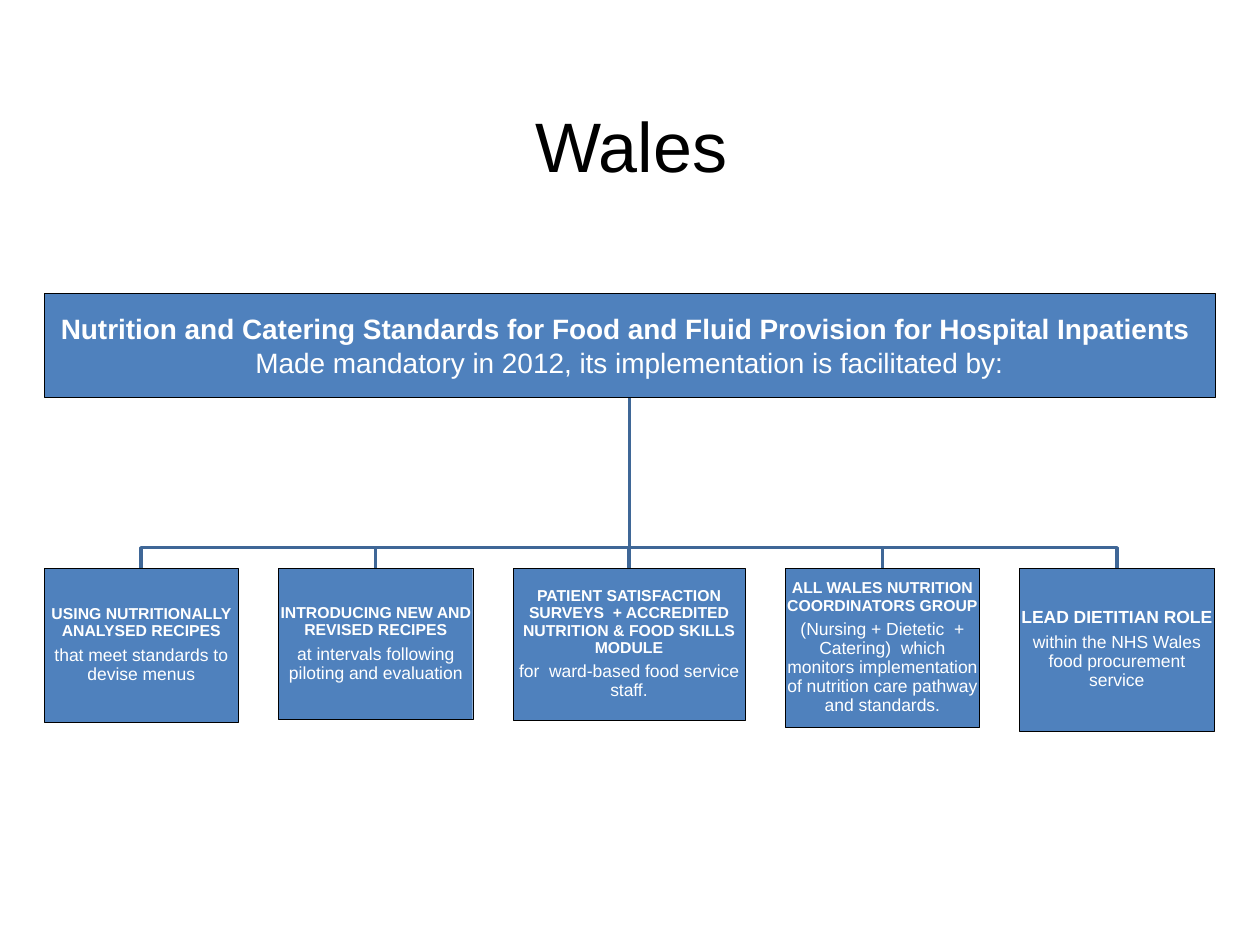
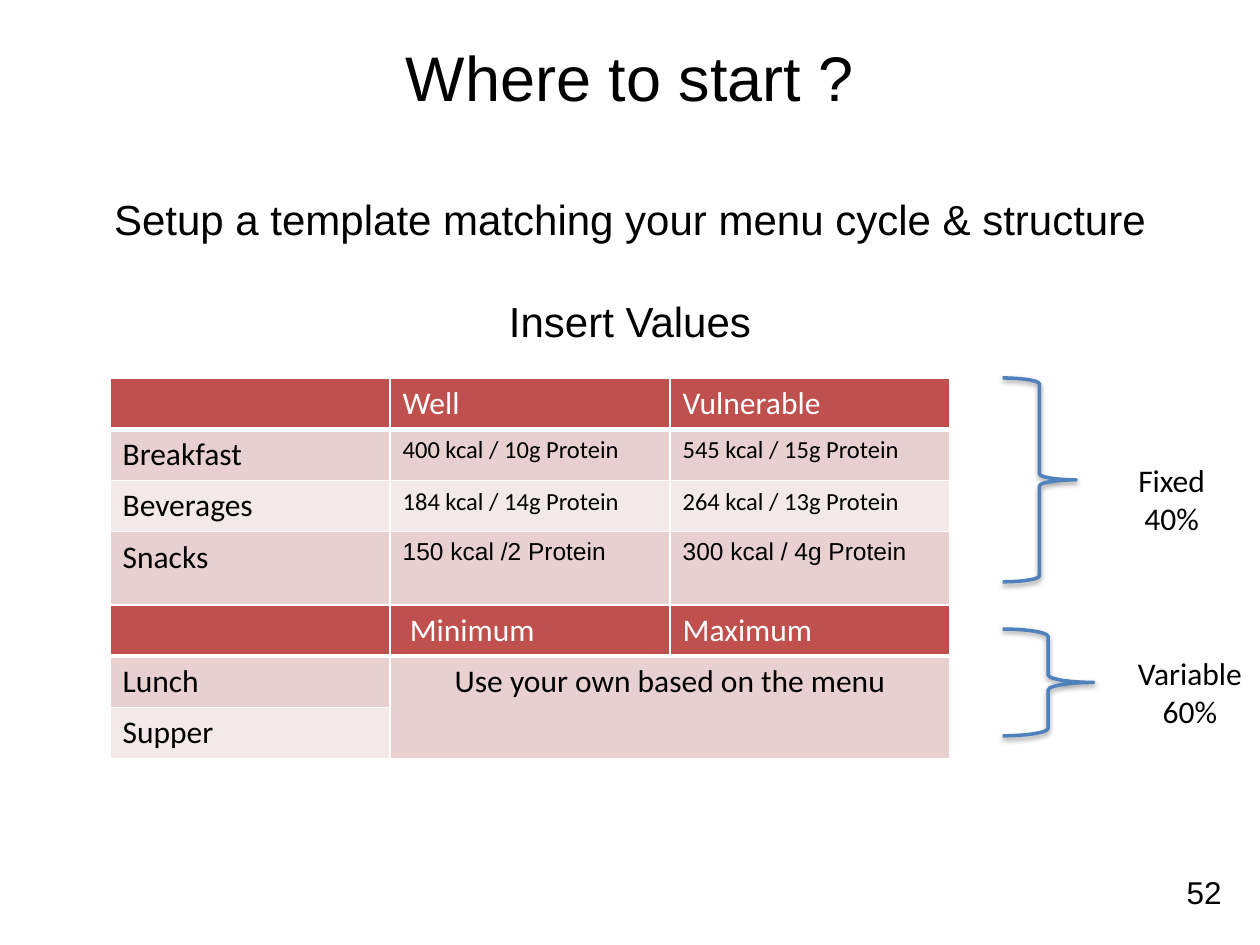
from lxml.etree import SubElement
from pptx import Presentation
from pptx.dml.color import RGBColor
from pptx.enum.shapes import MSO_SHAPE as Shape
from pptx.enum.text import MSO_ANCHOR as Anchor, MSO_AUTO_SIZE as AutoSize, PP_ALIGN as Align
from pptx.oxml.ns import qn
from pptx.util import Pt

BLUE, NAVY, RED = "4F81BD", "3F6797", "C0504D"
PINK, PALE = "E8D0D0", "F4E9E9"
BLACK, WHITE = "000000", "FFFFFF"
HEADING, BODY = "Arial", "Calibri"

STANDARD = [
    ("Nutrition and Catering Standards for Food and Fluid Provision for Hospital Inpatients ", 16, True),
    ("Made mandatory in 2012, its implementation is facilitated by:", 16, False),
]
MEASURES = [
    (111, 88, 9, "USING NUTRITIONALLY ANALYSED RECIPES",
     "that meet standards to devise menus"),
    (111, 86.5, 9, "INTRODUCING NEW AND REVISED RECIPES",
     "at intervals following piloting and evaluation"),
    (132.5, 87, 9, "PATIENT SATISFACTION SURVEYS  + ACCREDITED NUTRITION & FOOD SKILLS MODULE",
     "for  ward-based food service staff."),
    (111, 91, 9, "ALL WALES NUTRITION COORDINATORS GROUP",
     "(Nursing + Dietetic  + Catering)  which monitors implementation of nutrition care pathway and standards."),
    (111, 93, 10, "LEAD DIETITIAN ROLE",
     "within the NHS Wales food procurement service"),
]
START_TITLE = [
    ("Where to start ?", 36, 0),
    ("Setup a template matching your menu cycle & structure", 24, 45),
    ("Insert Values", 24, 30),
]
FIXED_ROWS = [
    ("", "Well", "Vulnerable"),
    ("Breakfast", "400 kcal / 10g Protein", "545 kcal / 15g Protein"),
    ("Beverages", "184 kcal / 14g Protein", "264 kcal / 13g Protein"),
    ("Snacks", "150 kcal /2 Protein", "300 kcal / 4g Protein"),
]
VARIABLE_ROWS = [
    ("", "Minimum", "Maximum"),
    ("Lunch", "Use your own based on the menu", ""),
    ("Supper", "", ""),
]
SHARES = [
    ((573, 216, 42, 116.5), (642.5, 260, 54, 51), ("Fixed", "40%")),
    ((573, 359.5, 52, 61), (642.5, 370, 75, 51), ("Variable", "60%")),
]
PAGE_NUMBER = "52"

ORG_LEFT, ORG_WIDTH, STANDARD_TOP, STANDARD_HEIGHT = 25.2, 669, 167.8, 59
BUS_TOP, MEASURE_TOP, MEASURE_GAP = 313, 324.7, 23
TABLE_LEFT, COLUMN_WIDTH, ROW_HEIGHT = 62.9, 160, 29.3


def rgb(value):
    return RGBColor.from_string(value)


def points(*values):
    return [Pt(value) for value in values]


def apply(target, values):
    for name, value in values.items():
        setattr(target, name, value)


def write(paragraph, text, size, color=BLACK, font=HEADING, bold=False, **layout):
    apply(paragraph, layout)
    run = paragraph.add_run()
    run.text = text
    apply(run.font, {"size": Pt(size), "name": font, "bold": bold})
    run.font.color.rgb = rgb(color)


def paragraphs(frame, items):
    for index, item in enumerate(items):
        yield (frame.add_paragraph() if index else frame.paragraphs[0]), item


def add_title(slide, box, lines):
    title = slide.shapes.title
    apply(title, dict(zip(("left", "top", "width", "height"), points(*box))))
    frame = title.text_frame
    apply(frame, {"word_wrap": True, "auto_size": AutoSize.NONE, "vertical_anchor": Anchor.MIDDLE})
    for paragraph, (text, size, gap) in paragraphs(frame, lines):
        write(paragraph, text, size, alignment=Align.CENTER, space_before=Pt(gap))


def add_box(slide, box, lines, **layout):
    shape = slide.shapes.add_shape(Shape.RECTANGLE, *points(*box))
    shape.shadow.inherit = False
    shape.fill.solid()
    shape.fill.fore_color.rgb = rgb(BLUE)
    shape.line.color.rgb = rgb(BLACK)
    shape.line.width = Pt(0.25)
    frame = shape.text_frame
    apply(frame, {"word_wrap": True, "vertical_anchor": Anchor.MIDDLE})
    apply(frame, dict.fromkeys(("margin_left", "margin_right", "margin_top", "margin_bottom"), Pt(0.7)))
    for paragraph, (text, size, bold) in paragraphs(frame, lines):
        write(paragraph, text, size, WHITE, bold=bold, alignment=Align.CENTER, **layout)


def add_branch(slide, center):
    trunk = ORG_LEFT + ORG_WIDTH / 2
    start = points(trunk, STANDARD_TOP + STANDARD_HEIGHT)
    route = [points(trunk, BUS_TOP), points(center, BUS_TOP), points(center, MEASURE_TOP)]
    builder = slide.shapes.build_freeform(*start)
    builder.add_line_segments(route, close=False)
    branch = builder.convert_to_shape()
    branch.shadow.inherit = False
    branch.fill.background()
    branch.line.color.rgb = rgb(NAVY)
    branch.line.width = Pt(2)


def add_label(slide, box, lines, font, alignment):
    frame = slide.shapes.add_textbox(*points(*box)).text_frame
    frame.word_wrap = False
    for paragraph, text in paragraphs(frame, lines):
        write(paragraph, text, 18, font=font, alignment=alignment)


def add_brace(slide, box):
    brace = slide.shapes.add_shape(Shape.RIGHT_BRACE, *points(*box))
    brace.shadow.inherit = False
    brace.fill.background()
    brace.line.color.rgb = rgb(BLUE)
    brace.line.width = Pt(2)
    effects = brace._element.spPr.find(qn("a:effectLst"))
    shadow = SubElement(effects, qn("a:outerShdw"), blurRad=str(Pt(3.1)), dist=str(Pt(1.6)),
                        dir="5400000", rotWithShape="0")
    color = SubElement(shadow, qn("a:srgbClr"), val=BLACK)
    SubElement(color, qn("a:alpha"), val="38000")


def style_cell(cell, fill, bottom):
    properties = cell._tc.get_or_add_tcPr()
    for side, width in (("L", 1), ("R", 1), ("T", 1), ("B", bottom)):
        line = SubElement(properties, qn(f"a:ln{side}"), w=str(Pt(width)))
        SubElement(SubElement(line, qn("a:solidFill")), qn("a:srgbClr"), val=WHITE)
    cell.fill.solid()
    cell.fill.fore_color.rgb = rgb(fill)


def add_menu_table(slide, top, rows, last_height, value_size):
    heights = [ROW_HEIGHT] * (len(rows) - 1) + [last_height]
    box = points(TABLE_LEFT, top, 3 * COLUMN_WIDTH, sum(heights))
    table = slide.shapes.add_table(len(rows), 3, *box).table
    apply(table, {"first_row": False, "horz_banding": False})
    for row_index, (row, height) in enumerate(zip(rows, heights)):
        table.rows[row_index].height = Pt(height)
        header = row_index == 0
        fill = RED if header else PINK if row_index % 2 else PALE
        for column, text in enumerate(row):
            cell = table.cell(row_index, column)
            style_cell(cell, fill, 3 if header else 1)
            if text:
                value = column > 0 and not header
                font = HEADING if value and row[0] == "Snacks" else BODY
                write(cell.text_frame.paragraphs[0], text, value_size if value else 18,
                      WHITE if header else BLACK, font)
    return table


def build_wales(slide):
    add_title(slide, (36.7, 37.4, 648, 90), [("Wales", 40, 0)])
    lefts = [ORG_LEFT + sum(measure[0] + MEASURE_GAP for measure in MEASURES[:index])
             for index in range(len(MEASURES))]
    for left, measure in zip(lefts, MEASURES):
        add_branch(slide, left + measure[0] / 2)
    add_box(slide, (ORG_LEFT, STANDARD_TOP, ORG_WIDTH, STANDARD_HEIGHT), STANDARD)
    for left, (width, height, size, heading, detail) in zip(lefts, MEASURES):
        add_box(slide, (left, MEASURE_TOP, width, height),
                [(heading, size, True), (detail, 10, False)], line_spacing=0.9, space_after=Pt(3.5))


def build_start(slide):
    add_title(slide, (36, 65, 648, 90), START_TITLE)
    add_label(slide, (671, 495.5, 48, 29), [PAGE_NUMBER], HEADING, Align.LEFT)
    add_menu_table(slide, 216, FIXED_ROWS, 45, 14)
    variable = add_menu_table(slide, 345.6, VARIABLE_ROWS, ROW_HEIGHT, 18)
    variable.cell(0, 1).margin_left = Pt(11.3)
    own_values = variable.cell(1, 1)
    own_values.merge(variable.cell(2, 2))
    own_values.text_frame.paragraphs[0].alignment = Align.CENTER
    for brace_box, label_box, lines in SHARES:
        add_brace(slide, brace_box)
        add_label(slide, label_box, lines, BODY, Align.CENTER)


def main():
    presentation = Presentation()
    apply(presentation, {"slide_width": Pt(720), "slide_height": Pt(540)})
    for build in (build_wales, build_start):
        build(presentation.slides.add_slide(presentation.slide_layouts[5]))
    presentation.save("out.pptx")


if __name__ == "__main__":
    main()
